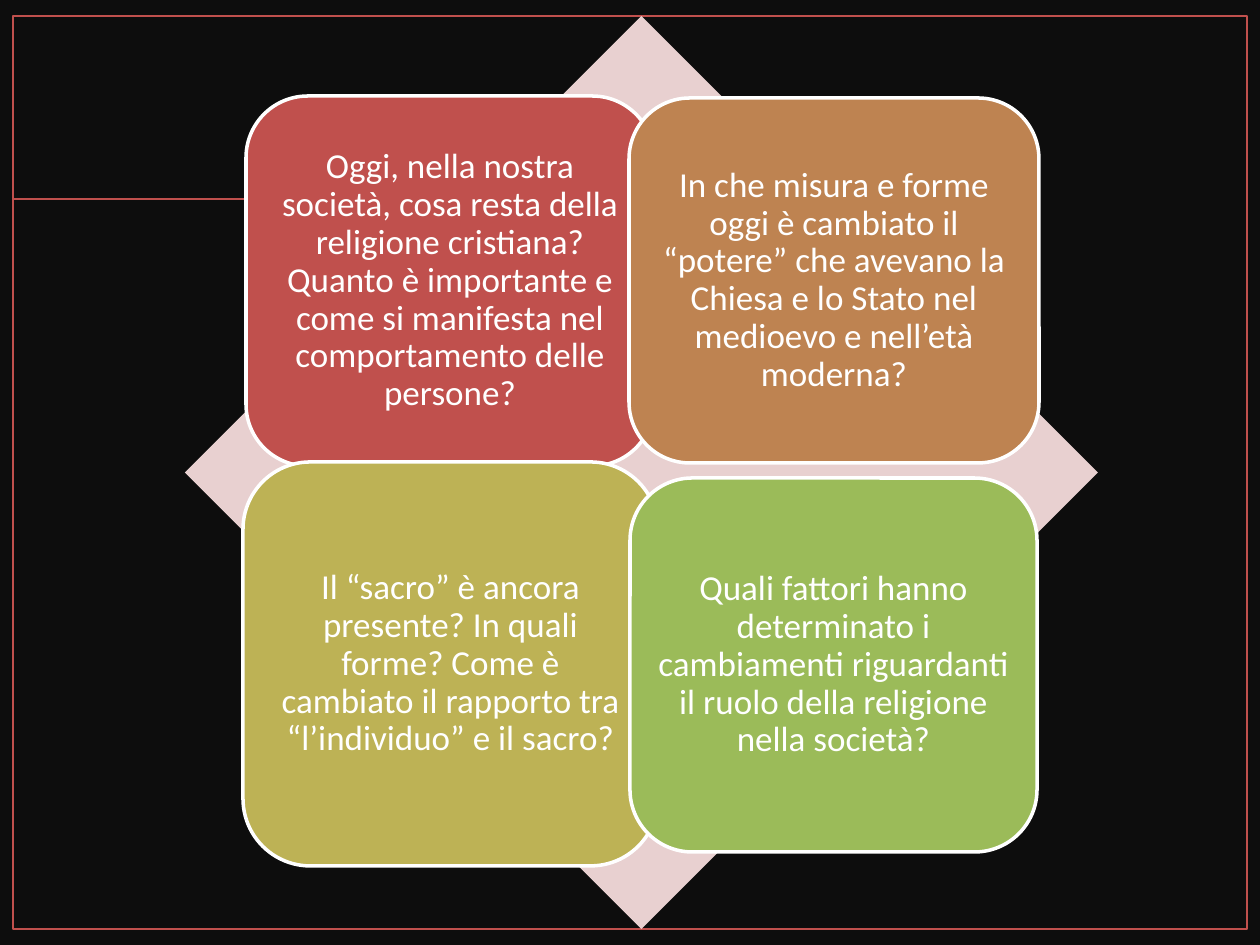
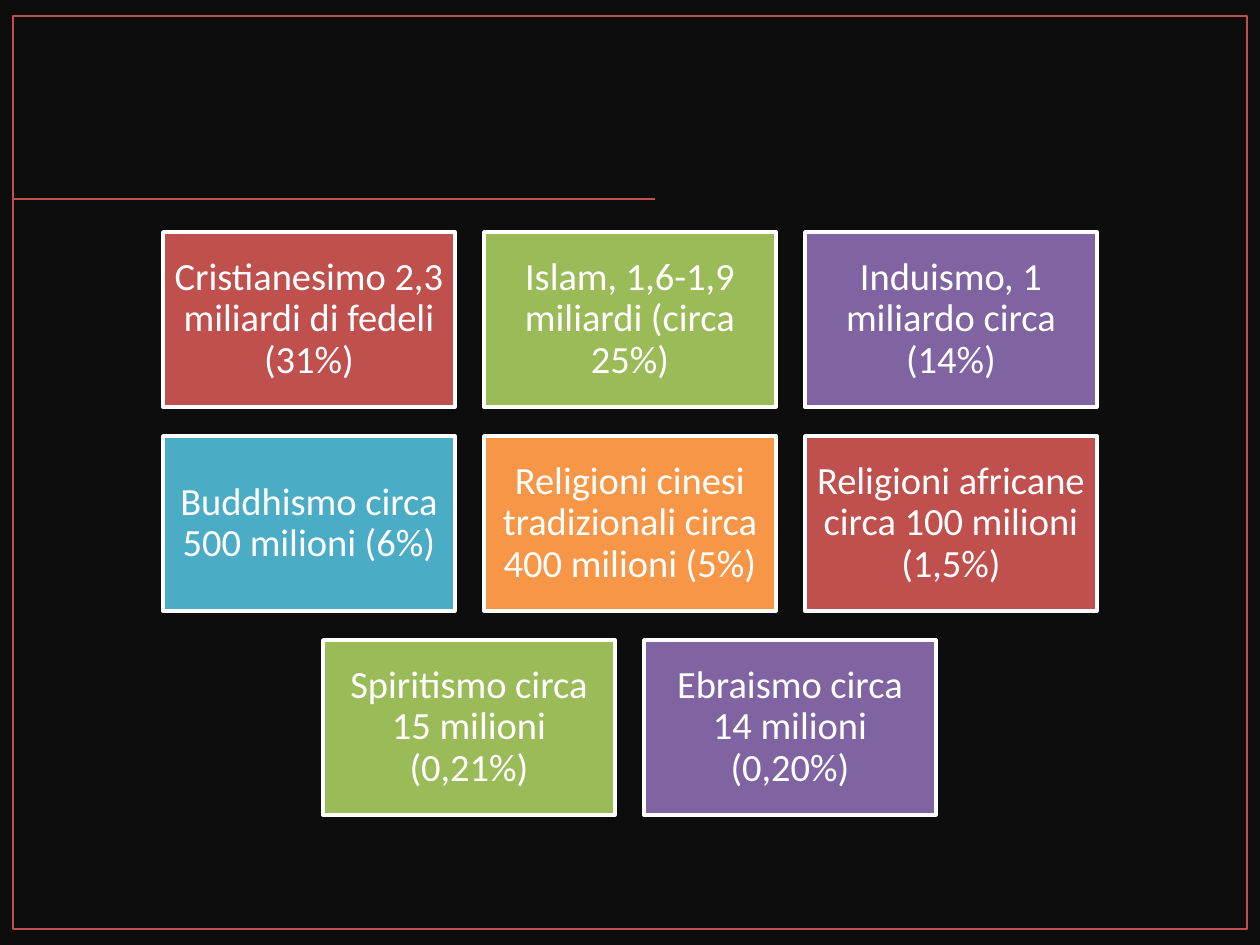
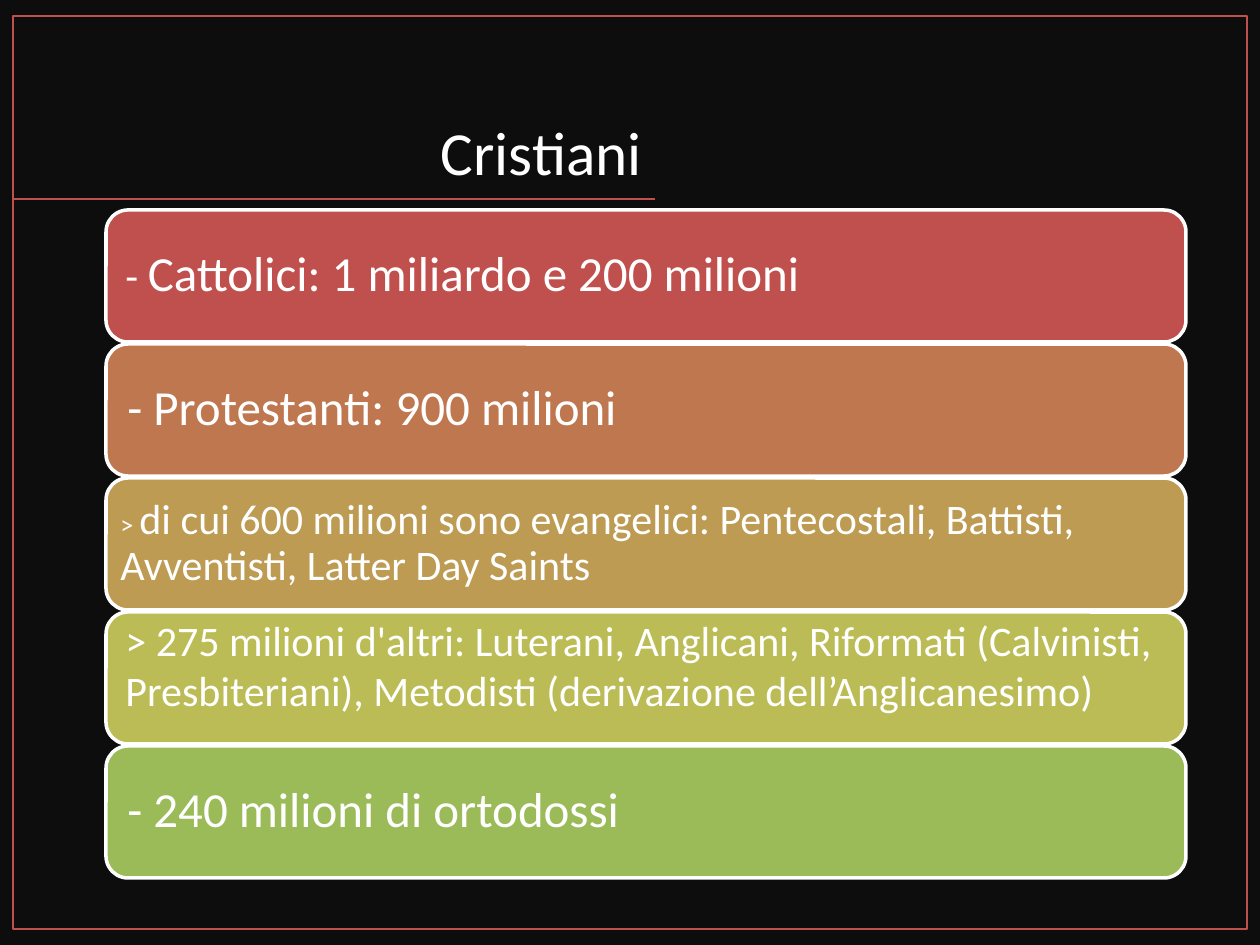
from lxml import etree
from pptx import Presentation
from pptx.dml.color import RGBColor
from pptx.enum.shapes import MSO_CONNECTOR, MSO_SHAPE
from pptx.enum.text import MSO_ANCHOR, PP_ALIGN
from pptx.oxml.ns import qn
from pptx.util import Emu, Pt

SCALE = 914400 / 126
W, H = 1260, 945
FONT = "Calibri"
C = {
    "black": "0D0D0D", "white": "FFFFFF", "red": "C0504D", "pink": "E8D0D0",
    "copper": "BE8351", "sand": "BDB255", "green": "9BBB59", "purple": "8064A2",
    "teal": "4BACC6", "orange": "F79646", "rust": "BF7750", "ochre": "BD9B53",
    "olive": "BCBC56",
}


def add_box(slide, kind, box, fill=None, line=None, width=2):
    sp = slide.shapes.add_shape(kind, *[Emu(round(v * SCALE)) for v in box])
    sp.shadow.inherit = False
    if fill:
        sp.fill.solid()
        sp.fill.fore_color.rgb = RGBColor.from_string(C[fill])
    else:
        sp.fill.background()
    if line:
        sp.line.color.rgb = RGBColor.from_string(C[line])
        sp.line.width = Pt(width)
    else:
        sp.line.fill.background()
    return sp


def write(sp, runs, insets, align=PP_ALIGN.CENTER, spacing=0.9, anchor=MSO_ANCHOR.MIDDLE):
    tf = sp.text_frame
    tf.word_wrap = True
    tf.vertical_anchor = anchor
    tf.margin_left, tf.margin_top, tf.margin_right, tf.margin_bottom = [
        Emu(round(v * SCALE)) for v in insets]
    p = tf.paragraphs[0]
    p.alignment = align
    p.line_spacing = spacing
    for text, size in runs:
        r = p.add_run()
        r.text = text
        r.font.size = Pt(size)
        r.font.name = FONT
        r.font.color.rgb = RGBColor.from_string(C["white"])


prs = Presentation()
prs.slide_width = Emu(round(W * SCALE))
prs.slide_height = Emu(round(H * SCALE))

slides = []
for _ in range(3):
    slide = prs.slides.add_slide(prs.slide_layouts[6])
    add_box(slide, MSO_SHAPE.RECTANGLE, (0, 0, W, H), "black")
    rule = slide.shapes.add_connector(
        MSO_CONNECTOR.STRAIGHT, *[Emu(round(v * SCALE)) for v in (655, 199, 13, 199)])
    rule.line.color.rgb = RGBColor.from_string(C["red"])
    rule.line.width = Pt(1)
    etree.SubElement(rule._element.spPr, qn("a:effectLst"))
    add_box(slide, MSO_SHAPE.RECTANGLE, (13, 16, 1234, 913), line="red", width=1)
    slides.append(slide)
questions, religions, christians = slides

add_box(questions, MSO_SHAPE.DIAMOND, (185, 16, 913, 913), "pink")
cards = [
    ((246, 96, 408, 370), "red",
     "Oggi, nella nostra società, cosa resta della religione cristiana? "
     "Quanto è importante e come si manifesta nel comportamento delle persone?"),
    ((629, 98, 410, 365), "copper",
     "In che misura e forme oggi è cambiato il “potere” che avevano la Chiesa "
     "e lo Stato nel medioevo e nell’età moderna?"),
    ((243, 462, 415, 404), "sand",
     "Il “sacro” è ancora presente? In quali forme? Come è cambiato il rapporto "
     "tra “l’individuo” e il sacro?"),
    ((630, 478, 407, 374), "green",
     "Quali fattori hanno determinato i cambiamenti riguardanti il ruolo della "
     "religione nella società?"),
]
for box, fill, text in cards:
    sp = add_box(questions, MSO_SHAPE.ROUNDED_RECTANGLE, box, fill, "white")
    write(sp, [(text, 20)], [10] * 4)

rows = [
    [("red", "Cristianesimo 2,3 miliardi di fedeli (31%)"),
     ("green", "Islam, 1,6-1,9 miliardi (circa 25%)"),
     ("purple", "Induismo, 1 miliardo circa (14%)")],
    [("teal", "Buddhismo circa 500 milioni (6%)"),
     ("orange", "Religioni cinesi tradizionali circa 400 milioni (5%)"),
     ("red", "Religioni africane circa 100 milioni (1,5%)")],
    [("green", "Spiritismo circa 15 milioni (0,21%)"),
     ("purple", "Ebraismo circa 14 milioni (0,20%)")],
]
tile_w, tile_h, gap = 292, 175, 29
for i, row in enumerate(rows):
    left = (W - len(row) * (tile_w + gap) + gap) // 2
    for j, (fill, text) in enumerate(row):
        box = (left + j * (tile_w + gap), 232 + i * (tile_h + gap), tile_w, tile_h)
        sp = add_box(religions, MSO_SHAPE.RECTANGLE, box, fill, "white")
        write(sp, [(text, 22)], [11] * 4)

title = christians.shapes.add_textbox(*[Emu(round(v * SCALE)) for v in (87, 53, 568, 141)])
write(title, [("Cristiani", 35)], (13, 6, 13, 6), PP_ALIGN.RIGHT, 1.0, MSO_ANCHOR.BOTTOM)

bars = [
    ("red", [("- ", 24), ("Cattolici: 1 miliardo e 200 milioni", 28)], [13] * 4, 0.9),
    ("rust", [("- Protestanti: 900 milioni", 28)], [15] * 4, 0.9),
    ("ochre", [("> ", 15),
               ("di cui 600 milioni sono evangelici: Pentecostali, Battisti, "
                "Avventisti, Latter Day Saints", 24)], [8] * 4, 0.9),
    ("olive", [("> 275 milioni d'altri: Luterani, Anglicani, Riformati (Calvinisti, "
                "Presbiteriani), Metodisti (derivazione dell’Anglicanesimo)", 24)],
     (13, 0, 13, 26), 1.0),
    ("green", [("- 240 milioni di ortodossi", 28)], [15] * 4, 0.9),
]
for i, (fill, runs, insets, spacing) in enumerate(bars):
    sp = add_box(christians, MSO_SHAPE.ROUNDED_RECTANGLE, (106, 210 + i * 134, 1080, 132),
                 fill, "white")
    write(sp, runs, insets, PP_ALIGN.LEFT, spacing)

prs.save("out.pptx")
